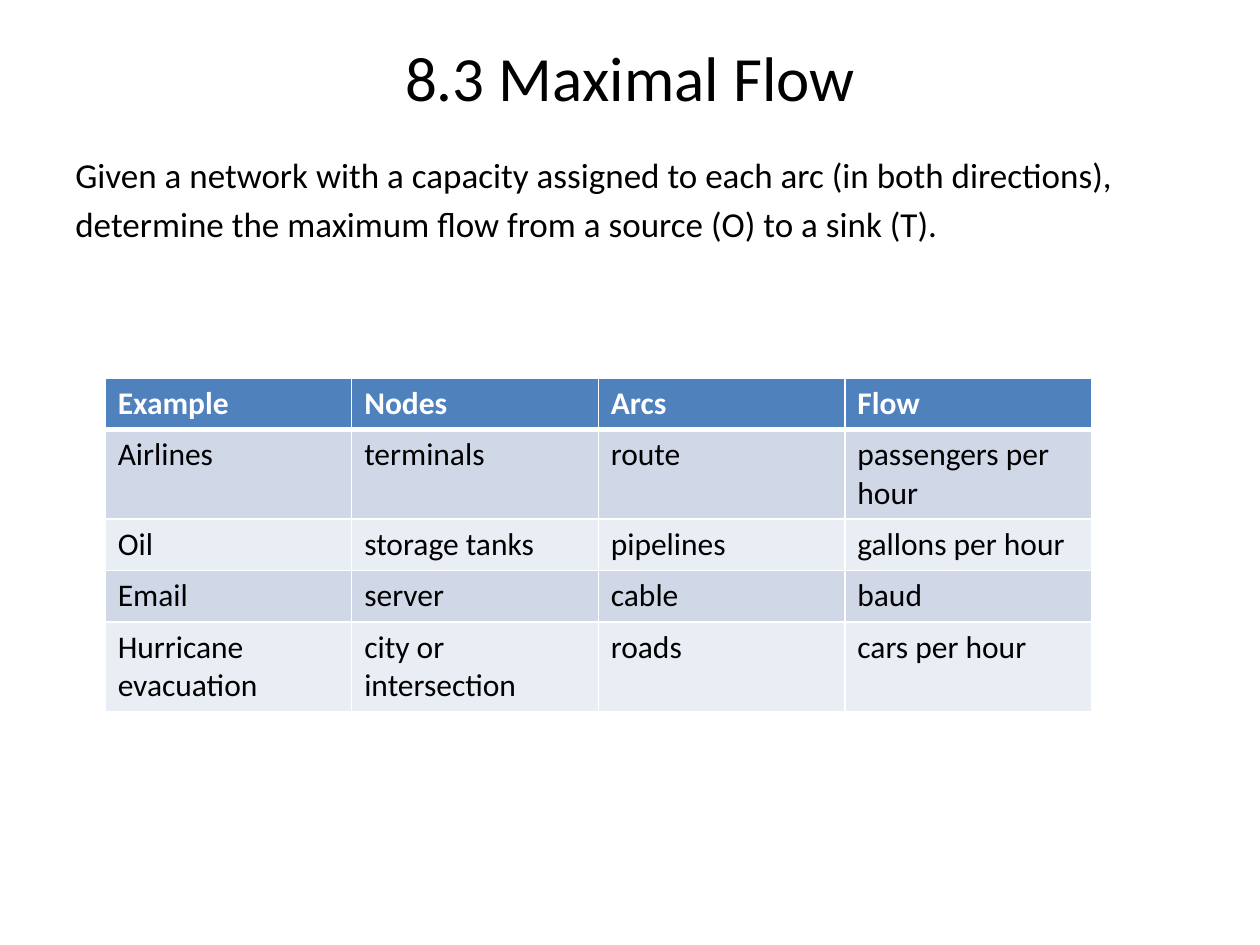
import lxml.etree
import pptx
import pptx.dml.color
import pptx.enum.text
import pptx.oxml.ns
import pptx.util

Cm = pptx.util.Cm
Pt = pptx.util.Pt
PP_ALIGN = pptx.enum.text.PP_ALIGN
MSO_ANCHOR = pptx.enum.text.MSO_ANCHOR
qn = pptx.oxml.ns.qn


def color(value):
    return pptx.dml.color.RGBColor.from_string(value)


def write_text(frame, text, font="Calibri", size=18, fill="000000", bold=False,
               align=PP_ALIGN.LEFT, space_before=0):
    frame.word_wrap = True
    for index, line in enumerate(text.split("\n")):
        paragraph = frame.paragraphs[0] if index == 0 else frame.add_paragraph()
        paragraph.alignment = align
        paragraph.space_before = Pt(space_before)
        run = paragraph.add_run()
        run.text = line
        run.font.name = font
        run.font.size = Pt(size)
        run.font.bold = bold
        run.font.color.rgb = color(fill)


class SlideBuilder:
    header_fill = "4F81BD"
    band_fills = ("D0D8E8", "E9EDF4")
    border_color = "FFFFFF"
    header_rule = 3
    thin_rule = 1

    def __init__(self, presentation):
        self.slide = presentation.slides.add_slide(presentation.slide_layouts[6])

    def text_box(self, left, top, width, height, text, anchor=MSO_ANCHOR.TOP, **style):
        shape = self.slide.shapes.add_textbox(Cm(left), Cm(top), Cm(width), Cm(height))
        shape.text_frame.vertical_anchor = anchor
        write_text(shape.text_frame, text, **style)

    def cell_borders(self, cell, top, bottom):
        properties = cell._tc.get_or_add_tcPr()
        widths = {"a:lnL": self.thin_rule, "a:lnR": self.thin_rule,
                  "a:lnT": top, "a:lnB": bottom}
        for position, (tag, width) in enumerate(widths.items()):
            line = lxml.etree.Element(qn(tag), w=str(Pt(width)))
            solid = lxml.etree.SubElement(line, qn("a:solidFill"))
            lxml.etree.SubElement(solid, qn("a:srgbClr"), val=self.border_color)
            properties.insert(position, line)

    def table(self, left, top, column_width, row_heights, rows):
        column_count = len(rows[0])
        table = self.slide.shapes.add_table(
            len(rows), column_count, Cm(left), Cm(top),
            Cm(column_width * column_count), Cm(sum(row_heights))).table
        for column in table.columns:
            column.width = Cm(column_width)
        for row_index, values in enumerate(rows):
            table.rows[row_index].height = Cm(row_heights[row_index])
            header = row_index == 0
            fill = self.header_fill if header else self.band_fills[(row_index - 1) % 2]
            for column_index, value in enumerate(values):
                cell = table.cell(row_index, column_index)
                cell.fill.solid()
                cell.fill.fore_color.rgb = color(fill)
                self.cell_borders(
                    cell,
                    top=self.header_rule if row_index == 1 else self.thin_rule,
                    bottom=self.header_rule if header else self.thin_rule)
                write_text(cell.text_frame, value, bold=header,
                           fill="FFFFFF" if header else "000000")


def main():
    presentation = pptx.Presentation()
    presentation.slide_width = Cm(25.4)
    presentation.slide_height = Cm(19.05)
    builder = SlideBuilder(presentation)

    builder.text_box(1.27, 0.76, 22.86, 1.57, "8.3 Maximal Flow",
                     anchor=MSO_ANCHOR.MIDDLE, size=36, align=PP_ALIGN.CENTER)
    builder.text_box(
        1.27, 2.97, 23.5, 13.84,
        "Given a network with a capacity assigned to each arc (in both directions),\n"
        "determine the maximum flow from a source (O) to a sink (T).",
        size=20, space_before=4)

    single, double = 1.04, 1.8
    builder.table(2.12, 7.62, 4.97, [single, double, single, single, double], [
        ["Example", "Nodes", "Arcs", "Flow"],
        ["Airlines", "terminals", "route", "passengers per hour"],
        ["Oil", "storage tanks", "pipelines", "gallons per hour"],
        ["Email", "server", "cable", "baud"],
        ["Hurricane evacuation", "city or intersection", "roads", "cars per hour"],
    ])

    presentation.save("out.pptx")


if __name__ == "__main__":
    main()
